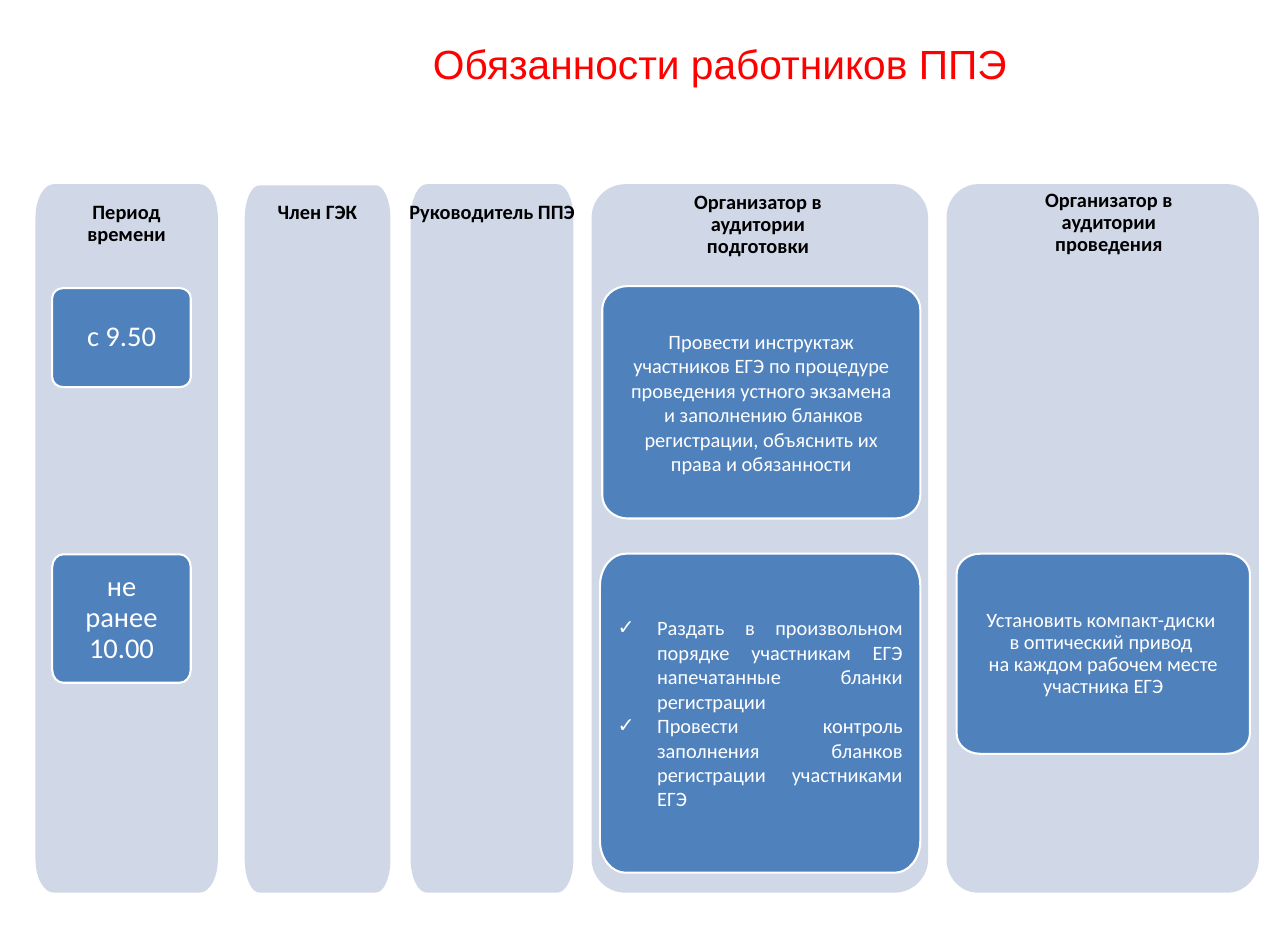
"""Build the slide on the duties of exam site staff by time period."""
from lxml import etree
from pptx import Presentation, util as u
from pptx.dml.color import RGBColor
from pptx.enum import text
from pptx.oxml.ns import qn

ALIGN = text.PP_ALIGN
ANCHOR = text.MSO_ANCHOR


def add_panel(left, top, width, height, radius_x, radius_y, fill):
    """Add a rounded panel whose corners are single Bezier curves."""
    right, bottom = left + width, top + height
    corners = [
        ((left, top + radius_y), (left, top), (left + radius_x, top)),
        ((right - radius_x, top), (right, top), (right, top + radius_y)),
        ((right, bottom - radius_y), (right, bottom), (right - radius_x, bottom)),
        ((left + radius_x, bottom), (left, bottom), (left, bottom - radius_y)),
    ]
    points = []
    for start, tip, end in corners:
        pulls = [[a + 0.55 * (b - a) for a, b in zip(edge, tip)] for edge in (start, end)]
        points += [(u.Cm(x), u.Cm(y)) for x, y in (start, *pulls, end)]
    builder = page.shapes.build_freeform(*points[0])
    builder.add_line_segments(points[1:], close=True)
    panel = builder.convert_to_shape()
    outline = next(panel._element.iter(qn("a:path")))
    steps = list(outline)
    for first in range(1, 16, 4):
        curve = etree.Element(qn("a:cubicBezTo"))
        steps[first].addprevious(curve)
        for step in steps[first:first + 3]:
            curve.append(step[0])
            outline.remove(step)
    panel.shadow.inherit = False
    panel.fill.solid()
    panel.fill.fore_color.rgb = RGBColor.from_string(fill)
    panel.line.fill.background()
    return panel


def write(box, paragraphs, size, color, font="Calibri", bold=False, align=ALIGN.CENTER,
          spacing=0.9, anchor=ANCHOR.MIDDLE, insets=(0.43, 0.23), bullet=None):
    """Fill a box with paragraphs given as lists of lines."""
    frame = box.text_frame
    frame.word_wrap = True
    frame.vertical_anchor = anchor
    frame.margin_left = frame.margin_right = u.Cm(insets[0])
    frame.margin_top = frame.margin_bottom = u.Cm(insets[1])
    for index, lines in enumerate(paragraphs):
        para = frame.add_paragraph() if index else frame.paragraphs[0]
        if bullet:
            properties = para._p.get_or_add_pPr()
            properties.set("marL", str(u.Cm(1.37)))
            properties.set("indent", str(-u.Cm(1.37)))
            etree.SubElement(properties, qn("a:buFont")).set("typeface", "Arial")
            etree.SubElement(properties, qn("a:buChar")).set("char", bullet)
        para.alignment = align
        para.line_spacing = spacing
        for number, line in enumerate(lines):
            if number:
                para.add_line_break()
            span = para.add_run()
            span.text = line
            span.font.name = font
            span.font.size = u.Pt(size)
            span.font.bold = bold
            span.font.color.rgb = RGBColor.from_string(color)


deck = Presentation()
deck.slide_width, deck.slide_height = u.Cm(44.63), u.Cm(32.49)
page = deck.slides.add_slide(deck.slide_layouts[5])

title = page.shapes.title
title.left, title.top, title.width, title.height = map(u.Cm, (9.75, 1.11, 30.38, 2.16))
write(title, [["Обязанности работников ППЭ"]], 40, "FF0000", font="Arial", spacing=1.0)
title.text_frame.auto_size = text.MSO_AUTO_SIZE.NONE

columns = [(1.23, 6.38, 6.32), (8.48, 6.42, 5.05), (14.23, 6.38, 5.64),
           (20.5, 6.38, 11.66), (32.8, 6.38, 10.82)]
for left, top, width in columns:
    add_panel(left, top, width, 30.92 - top, 0.1 * width, 1.16, "D0D8E8")

centered = {"align": ALIGN.CENTER}
loose = {"spacing": 1.0}
checklist = {"align": ALIGN.JUSTIFY, "spacing": 1.0, "bullet": "✓"}
cards = [
    (33.15, 19.18, 10.16, 6.93, 20, centered,
     [["Установить компакт-диски ", "в оптический привод ",
       "на каждом рабочем месте участника ЕГЭ"]]),
    (20.79, 19.18, 11.1, 11.05, 20, checklist,
     [["Раздать в произвольном порядке участникам ЕГЭ напечатанные бланки регистрации "],
      ["Провести контроль заполнения бланков регистрации участниками ЕГЭ"]]),
    (20.87, 9.91, 11.02, 8.05, 20, loose,
     [["Провести инструктаж участников ЕГЭ по процедуре проведения устного экзамена",
       " и заполнению бланков регистрации, объяснить их права и обязанности"]]),
    (1.81, 19.2, 4.8, 4.45, 28, centered, [["не ранее 10.00"]]),
    (1.81, 9.98, 4.8, 3.43, 28, centered, [["с 9.50"]]),
]
for left, top, width, height, size, style, paragraphs in cards:
    card = add_panel(left, top, width, height, 0.08 * width, 0.1 * height, "4F81BD")
    card.line.color.rgb = RGBColor.from_string("FFFFFF")
    card.line.width = u.Pt(2)
    write(card, paragraphs, size, "FFFFFF", insets=(0.61, 0.51), **style)

headings = [
    (1.58, 6.76, 5.61, 1.98, "Период времени"),
    (8.89, 6.76, 4.22, 1.22, "Член ГЭК"),
    (13.56, 6.76, 6.98, 1.98, "Руководитель ППЭ"),
    (22.53, 6.43, 7.47, 2.74, "Организатор в аудитории подготовки"),
    (34.82, 6.36, 7.21, 2.74, "Организатор в аудитории проведения"),
]
for left, top, width, height, label in headings:
    heading = page.shapes.add_textbox(u.Cm(left), u.Cm(top), u.Cm(width), u.Cm(height))
    write(heading, [[label]], 20, "000000", bold=True, anchor=ANCHOR.TOP)

deck.save("out.pptx")
